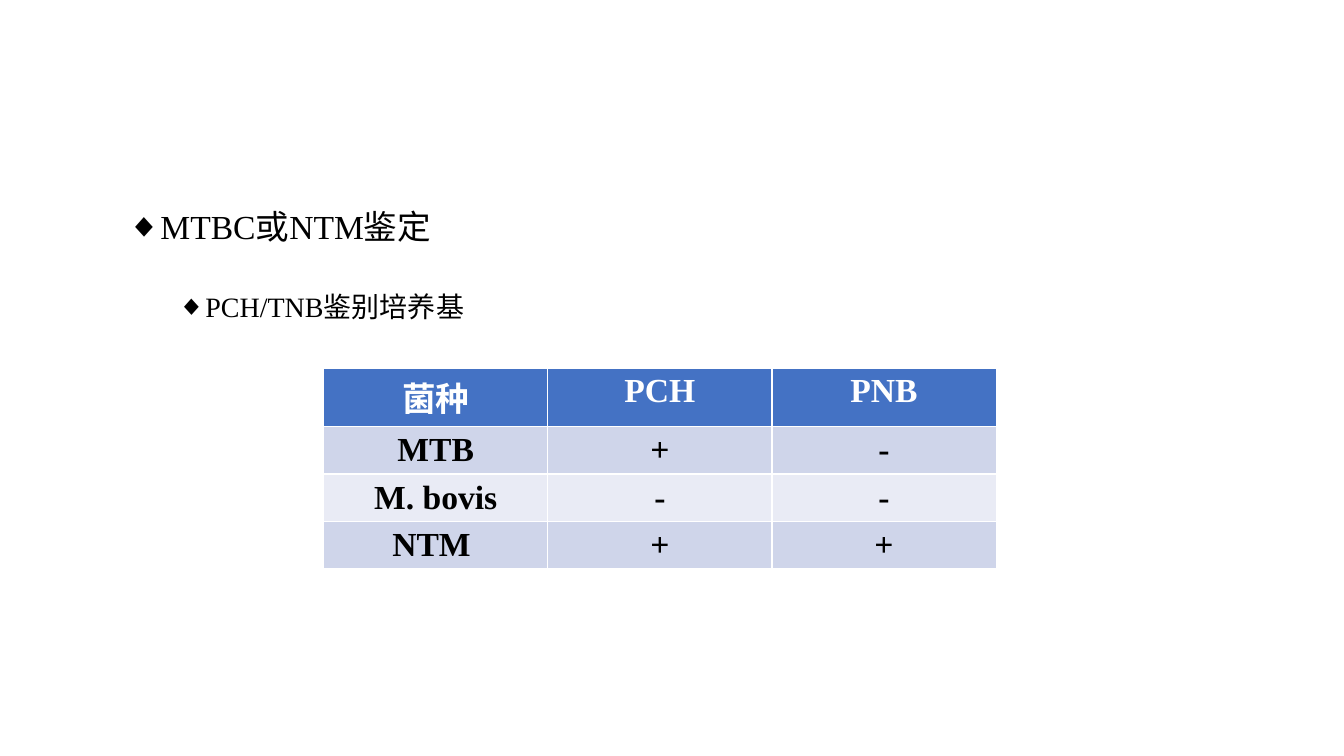
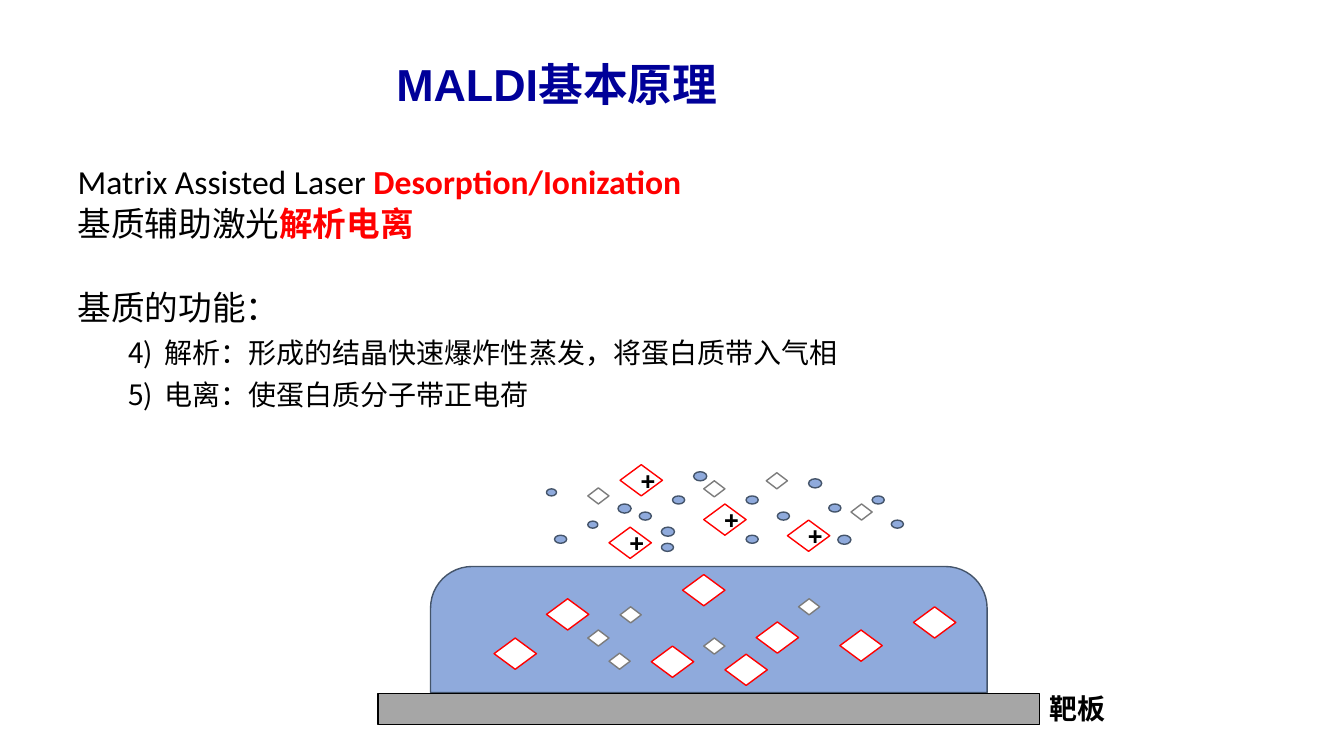
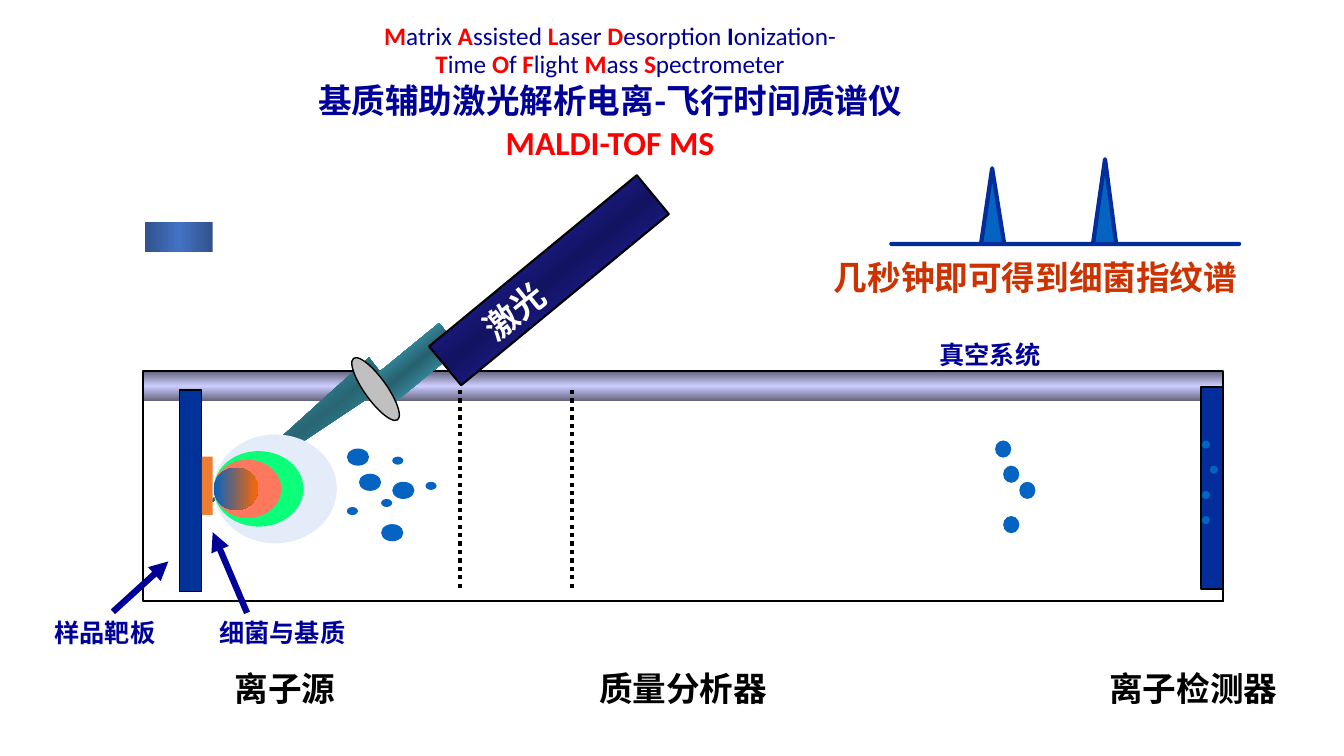
from lxml import etree
from pptx import Presentation
from pptx.dml.color import RGBColor
from pptx.enum.dml import MSO_LINE
from pptx.enum.shapes import MSO_CONNECTOR, MSO_SHAPE
from pptx.enum.text import MSO_ANCHOR, MSO_AUTO_SIZE, PP_ALIGN
from pptx.oxml.ns import qn
from pptx.util import Inches, Pt

RECT, OVAL, DIAMOND = MSO_SHAPE.RECTANGLE, MSO_SHAPE.OVAL, MSO_SHAPE.DIAMOND
TRIANGLE, ROUND_TOP = MSO_SHAPE.ISOSCELES_TRIANGLE, MSO_SHAPE.ROUND_2_SAME_RECTANGLE
STRAIGHT, DOTTED = MSO_CONNECTOR.STRAIGHT, MSO_LINE.ROUND_DOT
TOP, MIDDLE = MSO_ANCHOR.TOP, MSO_ANCHOR.MIDDLE
LEFT, CENTER = PP_ALIGN.LEFT, PP_ALIGN.CENTER
FIT_SHAPE, FIT_NONE = MSO_AUTO_SIZE.SHAPE_TO_FIT_TEXT, MSO_AUTO_SIZE.NONE

CJK = "Noto Sans CJK SC"
COLORS = {
    "black": "000000", "white": "FFFFFF", "red": "FF0000", "navy": "000099",
    "header": "4472C4", "band_dark": "CFD5EA", "band_light": "E9EBF5",
    "matrix": "8FAADC", "matrix_line": "44546A", "plate": "A6A6A6", "gray": "7C7C7C",
    "ion": "0563C1", "detector": "022D9A", "target": "003399", "sample": "ED7D31",
    "plume": "E4ECFA", "green": "0BFF79", "coral": "FD785D", "orange": "FF6600",
    "lens": "C0C0C0", "rust": "CC3300", "block_edge": "31528C",
    "tube_edge": "63637C", "tube": "CCCCFF", "beam_edge": "57DCFB",
    "cone": "286674", "beam": "27616F", "laser_edge": "3333FF", "laser": "131361",
}


def rgb(name):
    return RGBColor.from_string(COLORS[name])


def assign(obj, values):
    for name, value in values.items():
        setattr(obj, name, value)


def font(size, name, color, bold=False):
    return {"size": Pt(size), "name": name, "color": color, "bold": bold}


def inches(box):
    return [Inches(v) for v in box]


def add_runs(p, spans, base):
    for text, changes in spans:
        values = {**base, **changes}
        r = p.add_run()
        r.text = text
        r.font.color.rgb = rgb(values.pop("color"))
        assign(r.font, values)
        etree.SubElement(r._r.get_or_add_rPr(), qn("a:ea"), typeface=CJK)


def set_bullet(p, bullet, left=0, hang=0):
    pPr = p._p.get_or_add_pPr()
    pPr.set("marL", str(Inches(left)))
    pPr.set("indent", str(-Inches(hang)))
    tag, values = bullet
    etree.SubElement(pPr, qn(tag), **values)


def write(tf, paragraphs, base):
    for i, (spans, values, bullet) in enumerate(paragraphs):
        p = tf.paragraphs[0] if i == 0 else tf.add_paragraph()
        assign(p, values)
        if bullet:
            set_bullet(p, *bullet)
        add_runs(p, spans, base)


def fill_placeholder(sp, box, paragraphs, base, anchor=TOP):
    assign(sp, dict(zip(("left", "top", "width", "height"), inches(box))))
    assign(sp.text_frame, {"word_wrap": True, "auto_size": FIT_NONE,
                           "vertical_anchor": anchor})
    write(sp.text_frame, paragraphs, base)


def add_label(slide, box, text, base, align=CENTER, wrap=True, rotation=0):
    sp = slide.shapes.add_textbox(*inches(box))
    sp.rotation = rotation
    assign(sp.text_frame, {"word_wrap": wrap, "auto_size": FIT_SHAPE})
    write(sp.text_frame, [([(text, {})], {"alignment": align}, None)], base)


def set_gradient(sp, names, angle):
    sp.fill.gradient()
    sp.fill.gradient_angle = angle
    stops = sp._element.spPr.find(".//" + qn("a:gsLst"))
    for stop in list(stops):
        stops.remove(stop)
    for i, name in enumerate(names):
        stop = etree.SubElement(stops, qn("a:gs"), pos=str(100000 * i // (len(names) - 1)))
        etree.SubElement(stop, qn("a:srgbClr"), val=COLORS[name])


def paint(sp, fill=None, line=None, width=1, angle=0):
    sp.shadow.inherit = False
    if fill is None:
        sp.fill.background()
    elif isinstance(fill, tuple):
        set_gradient(sp, fill, angle)
    else:
        sp.fill.solid()
        sp.fill.fore_color.rgb = rgb(fill)
    if line:
        sp.line.color.rgb = rgb(line)
        sp.line.width = Pt(width)
    else:
        sp.line.fill.background()


def add_shape(slide, kind, box, fill=None, rotation=0, **look):
    sp = slide.shapes.add_shape(kind, *inches(box))
    sp.rotation = rotation
    paint(sp, fill, **look)
    return sp


def scatter(slide, kind, size, places, fill, **look):
    return [add_shape(slide, kind, (*place, *size), fill, **look) for place in places]


def add_line(slide, start, end, color, width, dash=None, arrow=False):
    cn = slide.shapes.add_connector(STRAIGHT, *inches((*start, *end)))
    cn.line.color.rgb = rgb(color)
    cn.line.width = Pt(width)
    if dash:
        cn.line.dash_style = dash
    if arrow:
        etree.SubElement(cn.line._get_or_add_ln(), qn("a:tailEnd"), type="triangle")
    etree.SubElement(cn._element.spPr, qn("a:effectLst"))


def add_grid(slide, box, rows, base):
    table = slide.shapes.add_table(len(rows), len(rows[0]), *inches(box)).table
    for i, row in enumerate(rows):
        table.rows[i].height = Inches(0.41)
        fill = "header" if i == 0 else ("band_light", "band_dark")[i % 2]
        color = "white" if i == 0 else "black"
        for j, text in enumerate(row):
            cell = table.cell(i, j)
            cell.fill.solid()
            cell.fill.fore_color.rgb = rgb(fill)
            write(cell.text_frame, [([(text, {"color": color})], {"alignment": CENTER}, None)], base)


def build_identification(prs):
    slide = prs.slides.add_slide(prs.slide_layouts[1])
    title = slide.shapes.title._element
    title.getparent().remove(title)
    diamond = ("a:buChar", {"char": "◆"})
    fill_placeholder(slide.placeholders[1], (1.16, 2.04, 11.03, 1.5), [
        ([("MTBC或NTM鉴定", {})],
         {"line_spacing": 0.9, "space_before": Pt(0)}, (diamond, 0.25, 0.25)),
        ([("PCH/TNB鉴别培养基", {"size": Pt(20)})],
         {"level": 1, "line_spacing": 0.9, "space_before": Pt(33)}, (diamond, 0.75, 0.25)),
    ], font(24, "Times New Roman", "black"))
    add_grid(slide, (3.21, 3.65, 6.67, 1.64), [
        ("菌种", "PCH", "PNB"),
        ("MTB", "+", "-"),
        ("M. bovis", "-", "-"),
        ("NTM ", "+", "+"),
    ], font(24, "Times New Roman", "black", True))


def build_principle(prs):
    slide = prs.slides.add_slide(prs.slide_layouts[1])
    fill_placeholder(slide.shapes.title, (0, 0.41, 11.05, 0.84),
                     [([("MALDI基本原理", {})], {"alignment": CENTER}, None)],
                     font(32, "Arial", "navy", True), MIDDLE)
    plain = (("a:buNone", {}),)
    numbered = (("a:buAutoNum", {"type": "arabicParenR", "startAt": "4"}), 0.86, 0.36)
    tight = {"line_spacing": Pt(30), "space_before": Pt(0)}
    key, small = {"color": "red", "bold": True}, {"size": Pt(20)}
    fill_placeholder(slide.placeholders[1], (0.67, 1.53, 11.78, 2.63), [
        ([("Matrix Assisted Laser ", {}), ("Desorption/Ionization", key)], tight, plain),
        ([("基质辅助激光", {}), ("解析电离", key)], tight, plain),
        ([("基质的功能：", {})], {**tight, "space_before": Pt(30)}, plain),
        ([("解析：形成的结晶快速爆炸性蒸发，将蛋白质带入气相", small)], tight, numbered),
        ([("电离：使蛋白质分子带正电荷", small)], tight, numbered),
    ], font(24, "Calibri", "black"))

    block = add_shape(slide, ROUND_TOP, (4.27, 5.62, 5.52, 1.25), "matrix", line="matrix_line")
    block.adjustments[0] = 0.33
    add_shape(slide, RECT, (3.75, 6.88, 6.56, 0.31), "plate", line="black")
    add_label(slide, (10.31, 6.81, 0.77, 0.44), "靶板",
              font(20, "Arial", "black", True), LEFT, wrap=False)

    protein, fragment = (0.42, 0.31), (0.21, 0.16)
    scatter(slide, DIAMOND, protein, [
        (4.9, 6.33), (5.42, 5.94), (6.46, 6.41), (7.19, 6.49),
        (6.77, 5.7), (9.06, 6.02), (7.5, 6.17), (8.33, 6.25)], "white", line="red")
    charged = scatter(slide, DIAMOND, protein, [
        (6.04, 5.23), (7.81, 5.16), (6.98, 5), (6.15, 4.61)], "white", line="red")
    for sp in charged:
        write(sp.text_frame, [([("+", {})], {"alignment": CENTER}, None)],
              font(18, "Arial", "black", True))
    scatter(slide, DIAMOND, fragment, [
        (5.83, 6.25), (6.15, 6.02), (6.98, 6.33), (7.92, 5.94), (6.04, 6.48),
        (7.6, 4.69), (8.44, 5), (6.98, 4.77), (5.83, 4.84)], "white", line="gray")
    vapour = {
        (0.12, 0.08): [(7.71, 5.08), (8.22, 5), (7.4, 5.31), (7.4, 4.92), (6.56, 5.39),
                       (6.67, 4.92), (8.65, 4.92), (8.84, 5.16), (6.34, 5.08), (5.5, 5.31)],
        (0.13, 0.09): [(6.56, 5.23), (6.88, 4.68), (8.31, 5.31), (6.13, 5), (8.02, 4.75)],
        (0.1, 0.07): [(5.83, 5.17), (5.42, 4.85)],
    }
    for size, places in vapour.items():
        scatter(slide, OVAL, size, places, "matrix", line="matrix_line")


def initials(text):
    spans = []
    for word in text.split():
        color = "navy" if word.startswith("I") else "red"
        spans += [(word[0], {"color": color, "bold": True}), (word[1:] + " ", {})]
    spans[-1] = (spans[-1][0].rstrip(), {})
    return spans


def add_spectrometer_title(slide):
    name = {"alignment": CENTER, "line_spacing": Pt(20), "space_before": Pt(0)}
    main_line = {"alignment": CENTER, "line_spacing": Pt(24), "space_before": Pt(6)}
    big = {"size": Pt(24), "bold": True}
    fill_placeholder(slide.shapes.title, (0.44, 0.17, 11.22, 1.5), [
        (initials("Matrix Assisted Laser Desorption Ionization-"), name, None),
        (initials("Time Of Flight Mass Spectrometer"), name, None),
        ([("基质辅助激光解析电离", big), ("-", {**big, "name": CJK}),
          ("飞行时间质谱仪", big)], main_line, None),
        ([("MALDI-TOF MS", {**big, "color": "red"})], main_line, None),
    ], font(18, "Calibri", "navy"))


def add_source(slide):
    add_shape(slide, RECT, (1.44, 2.2, 0.67, 0.3), ("block_edge", "header", "block_edge"))
    add_shape(slide, RECT, (1.42, 3.68, 10.71, 0.3), ("tube_edge", "tube", "tube_edge"), angle=90)
    add_shape(slide, RECT, (1.42, 3.68, 10.71, 2.28), line="black", width=1.5)
    add_shape(slide, TRIANGLE, (2.72, 3.25, 0.33, 2.22),
              ("beam_edge", "cone", "beam_edge"), 232.1)
    add_shape(slide, RECT, (3.67, 3.45, 0.89, 0.33),
              ("beam_edge", "beam", "beam_edge"), 320.7, angle=90)
    add_shape(slide, RECT, (1.78, 3.87, 0.22, 2), "target", line="black")
    add_shape(slide, RECT, (2, 4.53, 0.11, 0.58), "sample")
    add_shape(slide, RECT, (4.11, 2.53, 2.67, 0.5),
              ("laser_edge", "laser", "laser_edge"), 320.5, angle=90, line="black", width=1.5)
    add_label(slide, (4.57, 2.56, 1.74, 0.51), "激光",
              font(24, CJK, "white", True), LEFT, rotation=321)
    for x in (4.56, 5.67):
        add_line(slide, (x, 3.87), (x, 5.87), "black", 3, dash=DOTTED)
    for w, h, fill in ((1.22, 1.08, "plume"), (0.89, 0.75, "green"),
                       (0.67, 0.58, "coral"), (0.44, 0.42, ("ion", "orange"))):
        add_shape(slide, OVAL, (2.12, 4.85 - h / 2, w, h), fill)
    add_shape(slide, OVAL, (3.35, 3.75, 0.75, 0.22), "lens", 54.4, line="black")


def add_detector(slide):
    add_shape(slide, RECT, (11.91, 3.84, 0.22, 2), "detector", line="black", width=1.5)
    ions = {
        (0.22, 0.17): [(3.44, 4.45), (3.56, 4.7), (3.89, 4.78), (3.78, 5.2)],
        (0.11, 0.08): [(3.89, 4.53), (3.44, 5.03), (3.78, 4.95), (4.22, 4.78)],
        (0.16, 0.17): [(9.87, 4.37), (9.95, 4.62), (10.11, 4.78), (9.95, 5.12)],
        (0.08, 0.08): [(11.92, 4.37), (11.92, 5.12), (11.92, 4.87), (12, 4.62)],
    }
    for size, places in ions.items():
        scatter(slide, OVAL, size, places, "ion")
    add_shape(slide, RECT, (12.13, 4.24, 1.2, 1.33), "white", line="white")
    add_line(slide, (12.13, 3.68), (12.13, 5.97), "black", 1.5)


def add_spectrum(slide):
    base = 2.42
    points = [(9.73, base), (9.84, 1.67), (9.96, base), (10.84, base),
              (10.96, 1.58), (11.07, base), (12.29, base)]
    outline = slide.shapes.build_freeform(Inches(8.84), Inches(base))
    outline.add_line_segments([inches(point) for point in points], close=True)
    paint(outline.convert_to_shape(), "ion", line="detector", width=3)


def build_spectrometer(prs):
    slide = prs.slides.add_slide(prs.slide_layouts[5])
    add_spectrometer_title(slide)
    add_source(slide)
    add_detector(slide)
    add_spectrum(slide)
    note = font(18, "Arial", "navy", True)
    add_label(slide, (0.01, 6.08, 2.06, 0.4), "样品靶板", note)
    add_label(slide, (2.06, 6.08, 1.48, 0.4), "细菌与基质", note, wrap=False)
    add_label(slide, (9.22, 3.32, 1.22, 0.4), "真空系统", note, LEFT, wrap=False)
    add_line(slide, (1.12, 6.07), (1.67, 5.57), "navy", 4.5, arrow=True)
    add_line(slide, (2.45, 6.08), (2.11, 5.28), "navy", 4.5, arrow=True)
    for x, width, text in ((1.78, 2.09, "离子源"), (5.39, 2.77, "质量分析器"),
                           (10.45, 2.77, "离子检测器")):
        add_label(slide, (x, 6.58, width, 0.5), text, font(24, "Calibri", "black", True))
    add_label(slide, (7.24, 2.5, 6.06, 0.51), "几秒钟即可得到细菌指纹谱",
              font(24, "Arial", "rust", True))


def main():
    prs = Presentation()
    assign(prs, {"slide_width": Inches(13.33), "slide_height": Inches(7.5)})
    build_identification(prs)
    build_principle(prs)
    build_spectrometer(prs)
    prs.save("out.pptx")


if __name__ == "__main__":
    main()
